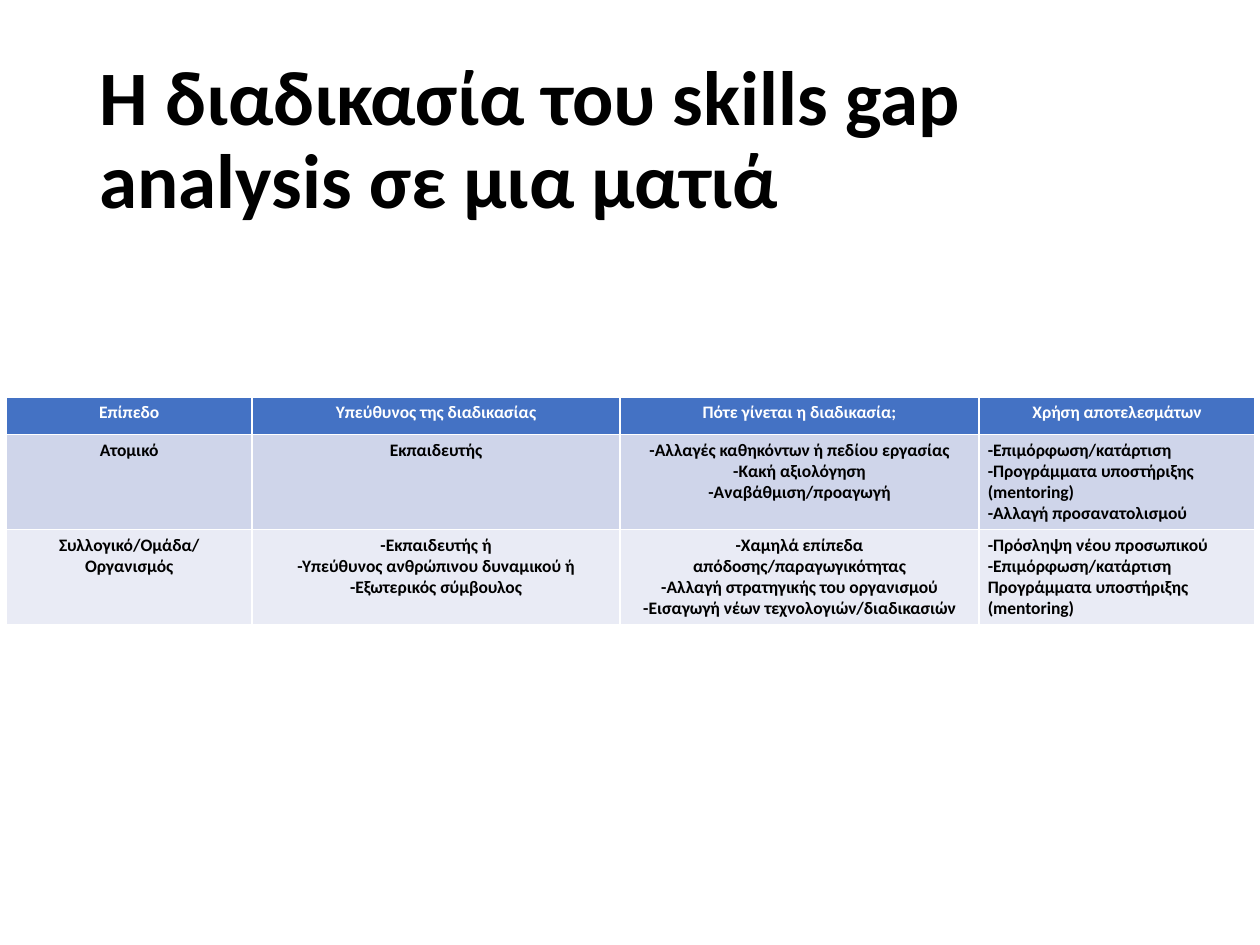
import pptx
import pptx.util
import pptx.dml.color
import pptx.enum.text
from dataclasses import dataclass

Inches, Pt = pptx.util.Inches, pptx.util.Pt
Align = pptx.enum.text.PP_ALIGN
Anchor = pptx.enum.text.MSO_ANCHOR

# Content: each cell is a list of paragraphs
TITLE = "Η διαδικασία του skills gap analysis σε μια ματιά"
ROWS = [
    [["Επίπεδο"], ["Υπεύθυνος της διαδικασίας"],
     ["Πότε γίνεται η διαδικασία;"], ["Χρήση αποτελεσμάτων"]],
    [["Ατομικό"], ["Εκπαιδευτής"],
     ["-Αλλαγές καθηκόντων ή πεδίου εργασίας", "-Κακή αξιολόγηση",
      "-Αναβάθμιση/προαγωγή"],
     ["-Επιμόρφωση/κατάρτιση", "-Προγράμματα υποστήριξης (mentoring)",
      "-Αλλαγή προσανατολισμού"]],
    [["Συλλογικό/Ομάδα/", "Οργανισμός"],
     ["-Εκπαιδευτής ή", "-Υπεύθυνος ανθρώπινου δυναμικού ή",
      "-Εξωτερικός σύμβουλος"],
     ["-Χαμηλά επίπεδα απόδοσης/παραγωγικότητας",
      "-Αλλαγή στρατηγικής του οργανισμού",
      "-Εισαγωγή νέων τεχνολογιών/διαδικασιών"],
     ["-Πρόσληψη νέου προσωπικού", "-Επιμόρφωση/κατάρτιση",
      "Προγράμματα υποστήριξης (mentoring)"]],
]

# Layout in inches
SLIDE_SIZE = (10, 7.5)
TITLE_BOX = (0.69, 0.4, 8.62, 1.45)
TABLE_ORIGIN = (0.05, 3.15)
COLUMN_WIDTHS = (1.95, 2.92, 2.85, 2.19)
ROW_HEIGHTS = (0.3, 0.75, 0.75)


@dataclass(frozen=True)
class Theme:
    font: str = "Calibri"
    title_size: int = 44
    table_size: int = 10
    text: str = "000000"
    header_text: str = "FFFFFF"
    row_fills: tuple = ("4472C4", "CFD5EA", "E9EBF5")


THEME = Theme()


def apply_format(target, values):
    for name, value in values.items():
        setattr(target, name, value)


def color(value):
    return pptx.dml.color.RGBColor.from_string(value)


def write_paragraph(paragraph, text, size, text_color, **layout):
    run = paragraph.add_run()
    run.text = text
    apply_format(run.font, {"name": THEME.font, "size": Pt(size), "bold": True})
    run.font.color.rgb = color(text_color)
    apply_format(paragraph, layout)


def add_title(slide):
    title = slide.shapes.title
    apply_format(title, dict(zip(("left", "top", "width", "height"),
                                 map(Inches, TITLE_BOX))))
    apply_format(title.text_frame, {
        "word_wrap": True, "vertical_anchor": Anchor.MIDDLE,
        "auto_size": pptx.enum.text.MSO_AUTO_SIZE.NONE})
    write_paragraph(title.text_frame.paragraphs[0], TITLE, THEME.title_size,
                    THEME.text, alignment=Align.LEFT, line_spacing=0.9)


def fill_cell(cell, texts, row, column):
    apply_format(cell, {
        "margin_left": Inches(0.07), "margin_right": Inches(0.07),
        "margin_top": Inches(0.04), "margin_bottom": Inches(0.04)})
    cell.fill.solid()
    cell.fill.fore_color.rgb = color(THEME.row_fills[row])
    is_header = row == 0
    is_list_column = column == len(COLUMN_WIDTHS) - 1
    alignment = Align.LEFT if is_list_column and not is_header else Align.CENTER
    text_color = THEME.header_text if is_header else THEME.text
    frame = cell.text_frame
    for index, text in enumerate(texts):
        paragraph = frame.add_paragraph() if index else frame.paragraphs[0]
        write_paragraph(paragraph, text, THEME.table_size, text_color,
                        alignment=alignment)


def add_process_table(slide):
    # The default table style supplies the white cell borders
    box = (*TABLE_ORIGIN, sum(COLUMN_WIDTHS), sum(ROW_HEIGHTS))
    table = slide.shapes.add_table(len(ROW_HEIGHTS), len(COLUMN_WIDTHS),
                                   *map(Inches, box)).table
    for column, width in zip(table.columns, COLUMN_WIDTHS):
        column.width = Inches(width)
    for row, height in zip(table.rows, ROW_HEIGHTS):
        row.height = Inches(height)
    for row, cells in enumerate(ROWS):
        for column, texts in enumerate(cells):
            fill_cell(table.cell(row, column), texts, row, column)


def main():
    presentation = pptx.Presentation()
    apply_format(presentation, dict(zip(("slide_width", "slide_height"),
                                        map(Inches, SLIDE_SIZE))))
    slide = presentation.slides.add_slide(presentation.slide_layouts[5])
    add_title(slide)
    add_process_table(slide)
    presentation.save("out.pptx")


if __name__ == "__main__":
    main()
